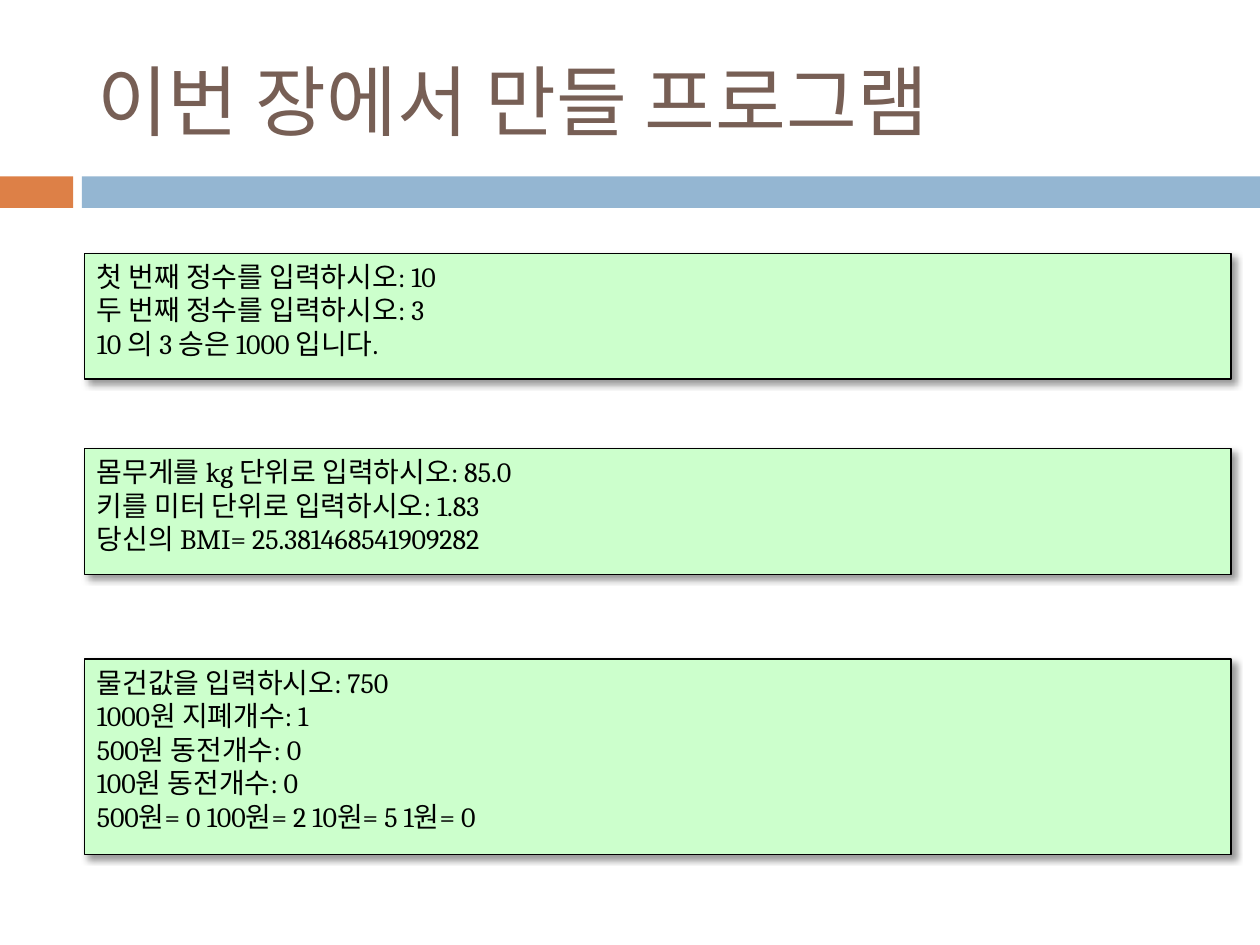
from lxml import etree
from pptx import Presentation
from pptx.dml.color import RGBColor
from pptx.enum.shapes import MSO_SHAPE
from pptx.enum.text import MSO_ANCHOR, PP_ALIGN
from pptx.oxml.ns import qn
from pptx.util import Inches, Pt

RECTANGLE = MSO_SHAPE.RECTANGLE
TOP, MIDDLE = MSO_ANCHOR.TOP, MSO_ANCHOR.MIDDLE
LEFT = PP_ALIGN.LEFT

COLORS = {"orange": "DD8047", "blue": "94B6D2", "brown": "775F55",
          "green": "CCFFCC", "black": "000000"}
TITLE = "이번 장에서 만들 프로그램"
TITLE_BOX = (0.67, 0.25, 8.92, 1.08)
TITLE_FONT = {"name": "Calibri", "size": Pt(44), "bold": False}
OUTPUT_FONT = {"name": "Cambria", "size": Pt(16)}
BANDS = [("orange", 0, 0.58), ("blue", 0.65, 9.35)]
BAND_TOP, BAND_HEIGHT = 1.4, 0.25
OUTPUT_LEFT, OUTPUT_WIDTH = 0.67, 9.1
OUTPUTS = [
    (2.01, 1, ["첫 번째 정수를 입력하시오: 10",
               "두 번째 정수를 입력하시오: 3",
               "10 의 3 승은 1000 입니다."]),
    (3.56, 1, ["몸무게를 kg 단위로 입력하시오: 85.0",
               "키를 미터 단위로 입력하시오: 1.83",
               "당신의 BMI= 25.381468541909282"]),
    (5.23, 1.55, ["물건값을 입력하시오: 750",
                  "1000원 지폐개수: 1",
                  "500원 동전개수: 0",
                  "100원 동전개수: 0",
                  "500원= 0 100원= 2 10원= 5 1원= 0"]),
]
SHADOW = {"blurRad": Pt(4), "dist": Pt(3), "dir": 45 * 60000,
          "algn": "ctr", "rotWithShape": 0}
SHADOW_ALPHA = 40


def rgb(name):
    return RGBColor.from_string(COLORS[name])


def add_rectangle(slide, box, color):
    shape = slide.shapes.add_shape(RECTANGLE, *map(Inches, box))
    shape.shadow.inherit = False
    shape.fill.solid()
    shape.fill.fore_color.rgb = rgb(color)
    shape.line.fill.background()
    return shape


def add_shadow(shape):
    effects = shape._element.spPr.find(qn("a:effectLst"))
    shadow = etree.SubElement(effects, qn("a:outerShdw"),
                              {key: str(value) for key, value in SHADOW.items()})
    color = etree.SubElement(shadow, qn("a:srgbClr"), val=COLORS["black"])
    etree.SubElement(color, qn("a:alpha"), val=str(SHADOW_ALPHA * 1000))


def write_text(shape, lines, anchor, font_format, color):
    frame = shape.text_frame
    frame.text = "\n".join(lines)
    frame.word_wrap = True
    frame.vertical_anchor = anchor
    for paragraph in frame.paragraphs:
        paragraph.alignment = LEFT
        font = paragraph.runs[0].font
        for attribute, value in font_format.items():
            setattr(font, attribute, value)
        font.color.rgb = rgb(color)


def main():
    """Build the slide that shows the sample program outputs."""
    presentation = Presentation()
    presentation.slide_width, presentation.slide_height = Inches(10), Inches(7.5)
    slide = presentation.slides.add_slide(
        presentation.slide_layouts.get_by_name("Title Only"))

    for color, left, width in BANDS:
        add_rectangle(slide, (left, BAND_TOP, width, BAND_HEIGHT), color)

    title = slide.shapes.title
    title.left, title.top, title.width, title.height = map(Inches, TITLE_BOX)
    write_text(title, [TITLE], MIDDLE, TITLE_FONT, "brown")

    for top, height, lines in OUTPUTS:
        box = (OUTPUT_LEFT, top, OUTPUT_WIDTH, height)
        panel = add_rectangle(slide, box, "green")
        panel.line.color.rgb = rgb("black")
        panel.line.width = Pt(0.75)
        add_shadow(panel)
        write_text(panel, lines, TOP, OUTPUT_FONT, "black")

    presentation.save("out.pptx")


if __name__ == "__main__":
    main()
